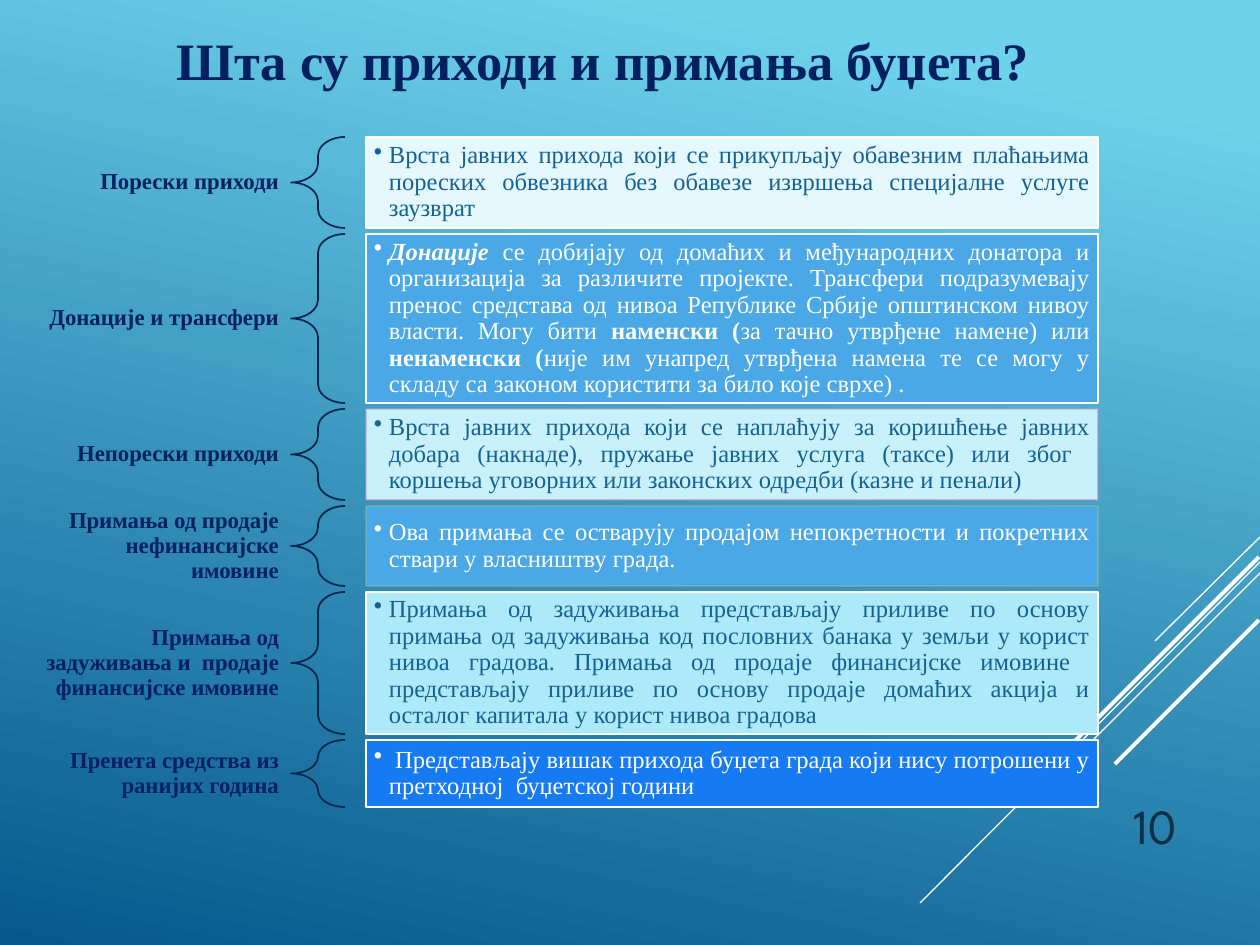
from lxml.etree import SubElement
from pptx import Presentation
from pptx.dml.color import RGBColor
from pptx.enum.shapes import MSO_CONNECTOR, MSO_SHAPE
from pptx.enum.text import MSO_ANCHOR, PP_ALIGN
from pptx.oxml.ns import qn
from pptx.util import Pt

PX = 914400 / 126
SERIF = "Times New Roman"
WHITE = RGBColor(0xFF, 0xFF, 0xFF)
NAVY = RGBColor(0x00, 0x20, 0x60)
INK = RGBColor(0x04, 0x26, 0x4E)
SLATE = RGBColor(0x0A, 0x30, 0x4A)
TEAL = RGBColor(0x14, 0x61, 0x94)
SKY = RGBColor(0x6E, 0xD2, 0xEB)
DEEP = RGBColor(0x06, 0x58, 0x8E)
BLUE = RGBColor(0x4A, 0xA8, 0xE7)
ROYAL = RGBColor(0x16, 0x7B, 0xF3)
ICE = RGBColor(0xE4, 0xF8, 0xFD)
PALE = RGBColor(0xC8, 0xF1, 0xFB)
AQUA = RGBColor(0xAD, 0xE9, 0xF8)
MAUVE = RGBColor(0xC0, 0x89, 0xBD)
SAGE = RGBColor(0xA4, 0xBB, 0x8B)


def emu(*sizes):
    return [round(size * PX) for size in sizes]


def style(para, size, color, align, face=SERIF, bold=False):
    para.alignment = align
    para.font.size = Pt(size)
    para.font.name = face
    para.font.bold = bold
    para.font.color.rgb = color


deck = Presentation()
deck.slide_width, deck.slide_height = emu(1260, 945)
slide = deck.slides.add_slide(deck.slide_layouts[5])
shapes = slide.shapes

back = slide.background.fill
back.gradient()
back.gradient_angle = 258
for stop, color, place in zip(back.gradient_stops, (SKY, DEEP), (0.1, 1)):
    stop.color.rgb = color
    stop.position = place

rays = [
    (1260, 537, 1155, 641, 0.75),
    (1260, 562, 920, 903, 0.75),
    (1260, 573, 1043, 790, 0.75),
    (1259, 557, 1061, 755, 2.25),
    (1259, 620, 1115, 764, 2.25),
]
for *ends, width in rays:
    ray = shapes.add_connector(MSO_CONNECTOR.STRAIGHT, *emu(*ends))
    ray.line.color.rgb = WHITE
    ray.line.width = Pt(width)
    SubElement(ray._element.spPr, qn("a:effectLst"))

title = shapes.title
title.left, title.top, title.width, title.height = emu(73, 21, 1061, 77)
title.text_frame.text = "Шта су приходи и примања буџета?"
style(title.text_frame.paragraphs[0], 30, NAVY, PP_ALIGN.CENTER, bold=True)

rows = [
    (91, 35, "Порески приходи", ICE, TEAL, WHITE, [
        ("Врста јавних прихода који се прикупљају обавезним плаћањима пореских "
         "обвезника без обавезе извршења специјалне услуге заузврат", "")]),
    (169, 35, "Донације и трансфери", BLUE, WHITE, WHITE, [
        ("Донације ", "bi"),
        ("се добијају од домаћих и међународних донатора и организација за "
         "различите пројекте. Трансфери подразумевају пренос средстава од нивоа "
         "Републике Србије општинском нивоу власти. Могу бити ", ""),
        ("наменски (", "b"),
        ("за тачно утврђене намене) или ", ""),
        ("ненаменски (", "b"),
        ("није им унапред утврђена намена те се могу у складу са законом "
         "користити за било које сврхе) .", "")]),
    (91, 35, "Непорески приходи", PALE, TEAL, MAUVE, [
        ("Врста јавних прихода који се наплаћују за коришћење јавних добара "
         "(накнаде), пружање јавних услуга (таксе) или због  коршења уговорних "
         "или законских одредби (казне и пенали)", "")]),
    (80, 79, "Примања од продаје нефинансијске имовине", BLUE, WHITE, SAGE, [
        ("Ова примања се остварују продајом непокретности и покретних ствари у "
         "власништву града.", "")]),
    (142, 79, "Примања од задуживања и  продаје финансијске имовине", AQUA, TEAL, WHITE, [
        ("Примања од задуживања представљају приливе по основу примања од "
         "задуживања код пословних банака у земљи у корист нивоа градова. "
         "Примања од продаје финансијске имовине  представљају приливе по основу "
         "продаје домаћих акција и осталог капитала у корист нивоа градова", "")]),
    (67, 57, "Пренета средства из ранијих година", ROYAL, WHITE, WHITE, [
        (" Представљају вишак прихода буџета града који нису потрошени у "
         "претходној  буџетској години", "")]),
]
top = 137
for high, tall, name, fill, color, edge, parts in rows:
    label = shapes.add_textbox(*emu(21, top + (high - tall) / 2, 270, tall))
    frame = label.text_frame
    frame.word_wrap = True
    frame.vertical_anchor = MSO_ANCHOR.MIDDLE
    frame.margin_top, frame.margin_bottom = emu(5, 5)
    para = frame.paragraphs[0]
    para.text = name
    para.line_spacing = 0.9
    style(para, 13, NAVY, PP_ALIGN.RIGHT, bold=True)

    brace = shapes.add_shape(MSO_SHAPE.LEFT_BRACE, *emu(291, top, 54, high))
    brace.adjustments[0] = 0.35
    brace.adjustments[1] = 0.5
    brace.shadow.inherit = False
    brace.fill.background()
    brace.line.color.rgb = INK
    brace.line.width = Pt(1)

    box = shapes.add_shape(MSO_SHAPE.RECTANGLE, *emu(366, top, 732, high))
    box.shadow.inherit = False
    box.fill.solid()
    box.fill.fore_color.rgb = fill
    box.line.color.rgb = edge
    box.line.width = Pt(1 if edge == WHITE else 0.75)
    if edge != WHITE:
        tint = box.line._ln.find(".//" + qn("a:srgbClr"))
        SubElement(tint, qn("a:alpha"), val="60000")
    frame = box.text_frame
    frame.word_wrap = True
    frame.vertical_anchor = MSO_ANCHOR.MIDDLE
    frame.margin_left, frame.margin_right = emu(8, 8)
    frame.margin_top, frame.margin_bottom = emu(8, 8)
    para = frame.paragraphs[0]
    para.line_spacing = 0.9
    props = para._p.get_or_add_pPr()
    indent, = emu(15)
    props.set("marL", str(indent))
    props.set("indent", str(-indent))
    SubElement(props, qn("a:buChar"), char="•")
    style(para, 14, color, PP_ALIGN.JUSTIFY)
    for text, marks in parts:
        run = para.add_run()
        run.text = text
        if "b" in marks:
            run.font.bold = True
        if "i" in marks:
            run.font.italic = True
    top += high + 6

page = shapes.add_textbox(*emu(1071, 769, 118, 92))
page.text_frame.word_wrap = True
page.text_frame.vertical_anchor = MSO_ANCHOR.BOTTOM
para = page.text_frame.paragraphs[0]
para.text = "10"
style(para, 28, SLATE, PP_ALIGN.RIGHT, "League Spartan")

deck.save("out.pptx")
